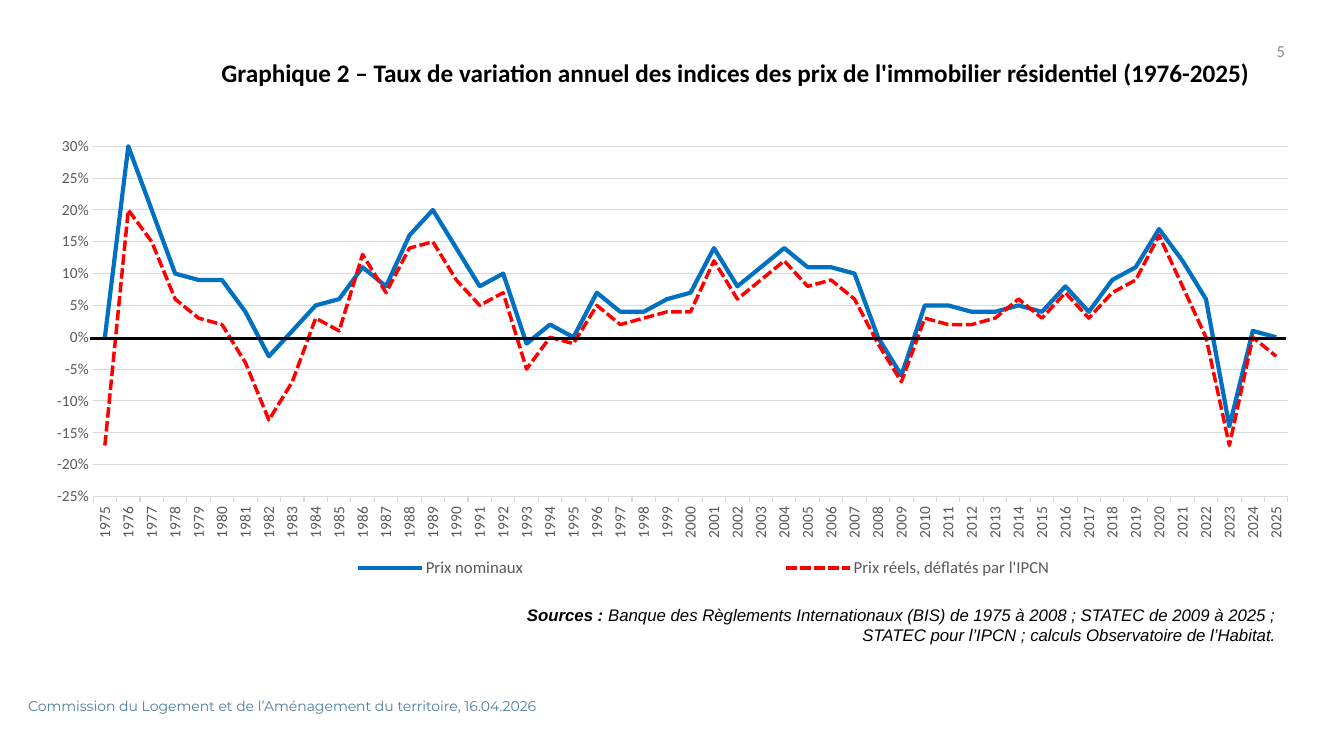
from pptx import Presentation
from pptx.chart.data import CategoryChartData
from pptx.dml.color import RGBColor
from pptx.enum.chart import (XL_AXIS_CROSSES, XL_CHART_TYPE, XL_LEGEND_POSITION,
                             XL_TICK_LABEL_POSITION, XL_TICK_MARK)
from pptx.enum.dml import MSO_LINE
from pptx.enum.shapes import MSO_CONNECTOR
from pptx.enum.text import MSO_ANCHOR, PP_ALIGN
from pptx.oxml.ns import qn
from pptx.util import Cm, Pt
from lxml import etree

LINE_CHART = XL_CHART_TYPE.LINE
AXIS_MINIMUM = XL_AXIS_CROSSES.MINIMUM
LEGEND_BOTTOM = XL_LEGEND_POSITION.BOTTOM
LABELS_LOW = XL_TICK_LABEL_POSITION.LOW
TICK_NONE, TICK_OUTSIDE = XL_TICK_MARK.NONE, XL_TICK_MARK.OUTSIDE
SOLID, DASHED = MSO_LINE.SOLID, MSO_LINE.SQUARE_DOT
STRAIGHT = MSO_CONNECTOR.STRAIGHT
TOP, MIDDLE = MSO_ANCHOR.TOP, MSO_ANCHOR.MIDDLE
LEFT, RIGHT = PP_ALIGN.LEFT, PP_ALIGN.RIGHT

YEARS = range(1975, 2026)
NOMINAL_PERCENT = [
    0, 30, 20, 10, 9, 9, 4, -3, 1, 5, 6, 11, 8, 16, 20, 14, 8, 10, -1, 2, 0, 7, 4, 4, 6, 7,
    14, 8, 11, 14, 11, 11, 10, 0, -6, 5, 5, 4, 4, 5, 4, 8, 4, 9, 11, 17, 12, 6, -14, 1, 0]
REAL_PERCENT = [
    -17, 20, 15, 6, 3, 2, -4, -13, -7, 3, 1, 13, 7, 14, 15, 9, 5, 7, -5, 0, -1, 5, 2, 3, 4, 4,
    12, 6, 9, 12, 8, 9, 6, -1, -7, 3, 2, 2, 3, 6, 3, 7, 3, 7, 9, 16, 8, 0, -17, 0, -3]
SERIES = [
    ("Prix nominaux", NOMINAL_PERCENT, "0070C0", 3, SOLID),
    ("Prix réels, déflatés par l'IPCN", REAL_PERCENT, "FF0000", 2.5, DASHED),
]


def color(value):
    """Turn a hex string into a colour."""
    return RGBColor.from_string(value)


def format_font(font, size, fill="000000", name="Calibri", bold=False, italic=False):
    """Apply one set of character formats to a font."""
    font.name, font.size, font.bold, font.italic = name, Pt(size), bold, italic
    font.color.rgb = color(fill)


def format_line(line, fill, width, dash=SOLID):
    """Apply colour, width and dash to a line."""
    line.color.rgb = color(fill)
    line.width = Pt(width)
    line.dash_style = dash


def place(shape, box):
    """Move a shape to a box given in centimetres."""
    shape.left, shape.top, shape.width, shape.height = (Cm(length) for length in box)


def write(shape, text, align=LEFT, anchor=TOP, lead="", **style):
    """Write one paragraph, with an optional bold lead-in."""
    frame = shape.text_frame
    frame.word_wrap = True
    frame.vertical_anchor = anchor
    frame.margin_left = frame.margin_right = Cm(0.25)
    frame.margin_top = frame.margin_bottom = Cm(0.13)
    paragraph = frame.paragraphs[0]
    paragraph.alignment = align
    if lead:
        run = paragraph.add_run()
        run.text = lead
        format_font(run.font, **{**style, "bold": True})
    run = paragraph.add_run()
    run.text = text
    format_font(run.font, **style)


def add_text(slide, box, text, **style):
    """Add a text box."""
    shape = slide.shapes.add_textbox(0, 0, 0, 0)
    place(shape, box)
    write(shape, text, **style)


def add_title(slide, box):
    """Place and fill the title placeholder."""
    place(slide.shapes.title, box)
    write(slide.shapes.title,
          "Graphique 2 – Taux de variation annuel des indices des prix "
          "de l'immobilier résidentiel (1976-2025)", size=18, bold=True)


def set_layout(parent, index, fractions, inner=False):
    """Give a chart part a manual layout in fractions of the chart."""
    for old in parent.findall(qn("c:layout")):
        parent.remove(old)
    layout = etree.Element(qn("c:layout"))
    manual = etree.SubElement(layout, qn("c:manualLayout"))
    settings = [("layoutTarget", "inner")] if inner else []
    settings += [("xMode", "edge"), ("yMode", "edge")]
    settings += zip("xywh", fractions)
    for name, value in settings:
        etree.SubElement(manual, qn("c:" + name)).set("val", str(value))
    parent.insert(index, layout)


def format_axes(chart):
    """Format the year axis and the percentage axis."""
    years, rates = chart.category_axis, chart.value_axis
    for axis in (years, rates):
        format_font(axis.tick_labels.font, 11, "595959")
        axis.minor_tick_mark = TICK_NONE
    years.major_tick_mark, rates.major_tick_mark = TICK_OUTSIDE, TICK_NONE
    years.tick_label_position = LABELS_LOW
    years.has_major_gridlines = False
    format_line(years.format.line, "D9D9D9", 0.75)
    years._element.find(qn("c:txPr")).find(qn("a:bodyPr")).set("rot", "-5400000")
    rates.minimum_scale, rates.maximum_scale, rates.major_unit = -0.25, 0.3, 0.05
    rates.crosses = AXIS_MINIMUM
    rates.tick_labels.number_format = "0%"
    rates.tick_labels.number_format_is_linked = False
    rates.format.line.fill.background()
    format_line(rates.major_gridlines.format.line, "D9D9D9", 0.75)


def add_rate_chart(slide, box):
    """Add the line chart and the black line that marks zero."""
    data = CategoryChartData(number_format="0%")
    data.categories = [str(year) for year in YEARS]
    for name, percents, *_ in SERIES:
        data.add_series(name, [percent / 100 for percent in percents])
    left, top, width, height = box
    frame = slide.shapes.add_chart(LINE_CHART, *(Cm(length) for length in box), data)
    chart = frame.chart
    chart.has_title = False
    format_font(chart.font, 10)
    chart.plots[0].vary_by_categories = False
    for series, (_, _, fill, weight, dash) in zip(chart.plots[0].series, SERIES):
        series.smooth = False
        format_line(series.format.line, fill, weight, dash)
    format_axes(chart)
    chart.has_legend = True
    chart.legend.position = LEGEND_BOTTOM
    chart.legend.include_in_layout = False
    format_font(chart.legend.font, 12, "595959")
    set_layout(chart.legend._element, 1, (0.05, 0.93, 0.95, 0.07))
    plot_area = chart._chartSpace.chart.plotArea
    set_layout(plot_area, 0, (0.044, 0.079, 0.941, 0.736), inner=True)

    zero = top + 5.79
    line = slide.shapes.add_connector(
        STRAIGHT, Cm(left + 1.32), Cm(zero), Cm(left + width - 0.53), Cm(zero))
    format_line(line.line, "000000", 2.25)
    etree.SubElement(line._element.spPr, qn("a:effectLst"))


def add_sources(slide, box):
    """Add the sources under the chart."""
    add_text(slide, box,
             "Banque des Règlements Internationaux (BIS) de 1975 à 2008 ; STATEC de 2009 à 2025 ; "
             "STATEC pour l’IPCN ; calculs Observatoire de l’Habitat.",
             lead="Sources : ", align=RIGHT, size=12, name="Arial", italic=True)


def add_margins(slide, number_box, footer_box):
    """Add the page number and the footer."""
    add_text(slide, number_box, "5", align=RIGHT, anchor=MIDDLE, size=12, fill="8C8C8C")
    add_text(slide, footer_box,
             "Commission du Logement et de l’Aménagement du territoire, 16.04.2026",
             size=10, fill="4E7FA0", name="Montserrat")


def main():
    """Build the slide and save it."""
    presentation = Presentation()
    presentation.slide_width, presentation.slide_height = Cm(33.87), Cm(19.05)
    slide = presentation.slides.add_slide(presentation.slide_layouts[5])
    add_margins(slide, (24.74, 0.76, 7.9, 1.02), (0.46, 17.45, 20.27, 0.69))
    add_title(slide, (5.33, 1.32, 26.8, 1.02))
    add_sources(slide, (12.93, 15.11, 19.48, 1.27))
    add_rate_chart(slide, (0.94, 2.74, 32, 11.99))
    presentation.save("out.pptx")


if __name__ == "__main__":
    main()
